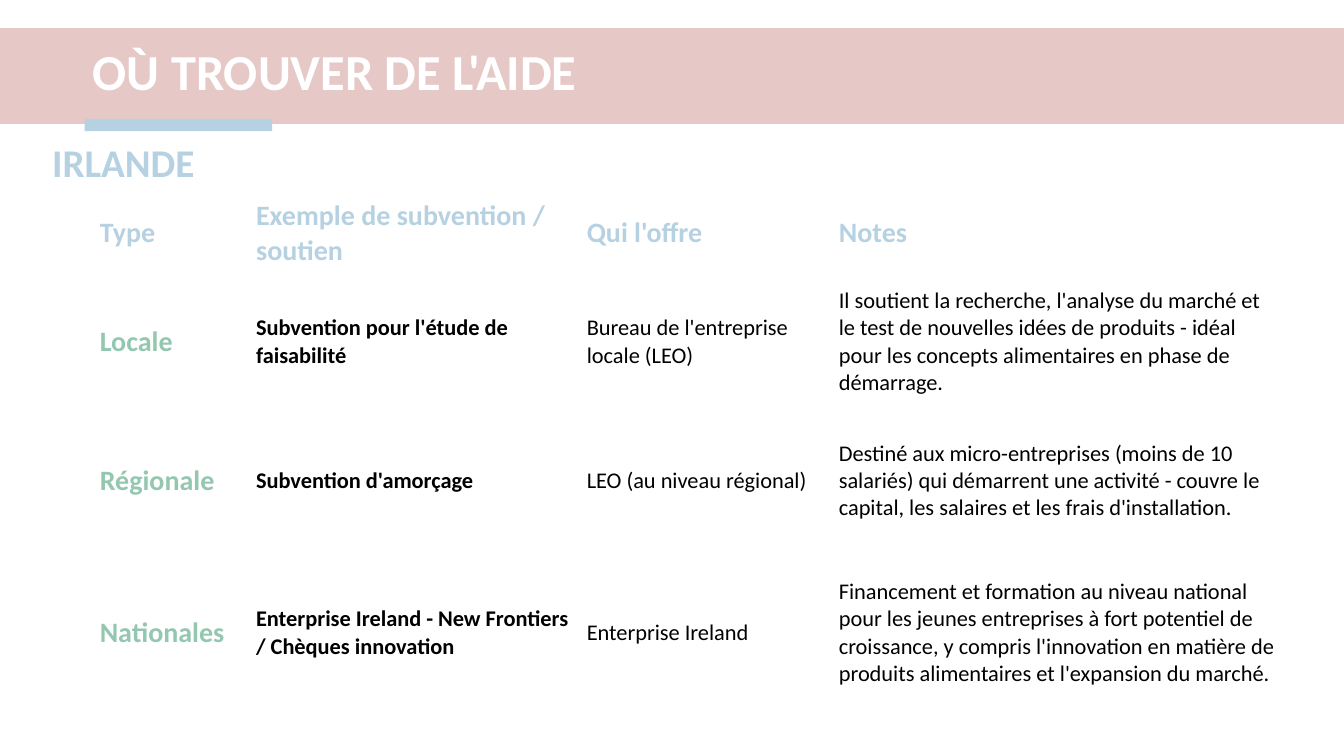
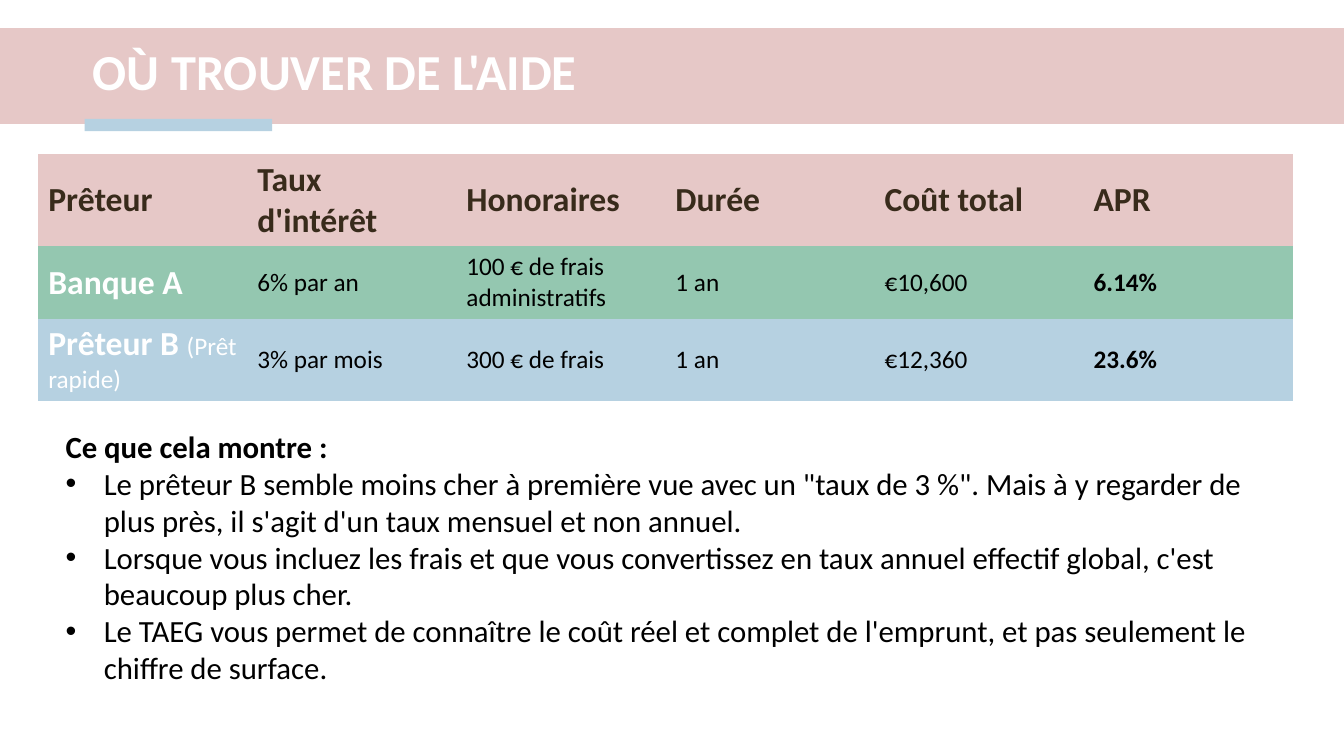
from dataclasses import dataclass
from typing import Optional

from lxml.etree import SubElement
from pptx import Presentation
from pptx.dml.color import RGBColor
from pptx.enum.shapes import MSO_SHAPE
from pptx.enum.text import MSO_ANCHOR, MSO_AUTO_SIZE, PP_ALIGN
from pptx.oxml.ns import qn
from pptx.util import Inches, Pt


@dataclass(frozen=True)
class Theme:
    font: str = "Calibri"
    pink: str = "E6C8C7"
    blue: str = "B6D1E1"
    green: str = "94C7B0"
    brown: str = "382B1B"
    black: str = "000000"
    white: str = "FFFFFF"
    title_size: int = 36
    country_size: int = 28
    lender_size: int = 24
    body_size: int = 22
    heading_size: int = 20
    figure_size: int = 18
    detail_size: int = 16


@dataclass(frozen=True)
class Style:
    size: int
    color: str
    bold: bool = False


@dataclass(frozen=True)
class Box:
    left: float
    top: float
    width: float
    height: float

    def lengths(self):
        return [Inches(value) for value in (self.left, self.top, self.width, self.height)]


@dataclass(frozen=True)
class TableRow:
    height: float
    texts: list[str]
    styles: list[Style]
    fill: Optional[str] = None
    note: str = ""


THEME = Theme()
TITLE = "OÙ TROUVER DE L'AIDE"
NO_STYLE_NO_GRID = "{2D5ABB26-0587-4C30-8999-92F81FD0307C}"
BULLET_INDENT = Inches(0.38)

TITLE_STYLE = Style(THEME.title_size, THEME.white, True)
COUNTRY_STYLE = Style(THEME.country_size, THEME.blue, True)
NOTE_STYLE = Style(THEME.figure_size, THEME.white)

SUPPORT_HEADER = [Style(THEME.heading_size, THEME.blue, True)] * 4
SUPPORT_STYLES = [
    Style(THEME.heading_size, THEME.green, True),
    Style(THEME.detail_size, THEME.black, True),
    Style(THEME.detail_size, THEME.black),
    Style(THEME.detail_size, THEME.black),
]
LOAN_HEADER = [Style(THEME.lender_size, THEME.brown, True)] * 6
LOAN_STYLES = [
    Style(THEME.lender_size, THEME.white, True),
    *[Style(THEME.figure_size, THEME.black)] * 4,
    Style(THEME.figure_size, THEME.black, True),
]

SUPPORT_ROWS = [
    TableRow(0.77, ["Type", "Exemple de subvention / soutien", "Qui l'offre", "Notes"],
             SUPPORT_HEADER),
    TableRow(1.38, [
        "Locale",
        "Subvention pour l'étude de faisabilité",
        "Bureau de l'entreprise locale (LEO)",
        "Il soutient la recherche, l'analyse du marché et le test de nouvelles idées "
        "de produits - idéal pour les concepts alimentaires en phase de démarrage.",
    ], SUPPORT_STYLES),
    TableRow(1.38, [
        "Régionale",
        "Subvention d'amorçage",
        "LEO (au niveau régional)",
        "Destiné aux micro-entreprises (moins de 10 salariés) qui démarrent une "
        "activité - couvre le capital, les salaires et les frais d'installation.",
    ], SUPPORT_STYLES),
    TableRow(1.64, [
        "Nationales",
        "Enterprise Ireland - New Frontiers / Chèques innovation",
        "Enterprise Ireland",
        "Financement et formation au niveau national pour les jeunes entreprises à "
        "fort potentiel de croissance, y compris l'innovation en matière de produits "
        "alimentaires et l'expansion du marché.",
    ], SUPPORT_STYLES),
]

LOAN_ROWS = [
    TableRow(0.91, ["Prêteur", "Taux d'intérêt", "Honoraires", "Durée", "Coût total", "APR"],
             LOAN_HEADER, THEME.pink),
    TableRow(0.72, ["Banque A", "6% par an", "100 € de frais administratifs", "1 an",
                    "€10,600", "6.14%"], LOAN_STYLES, THEME.green),
    TableRow(0.81, ["Prêteur B ", "3% par mois", "300 € de frais", "1 an",
                    "€12,360", "23.6%"], LOAN_STYLES, THEME.blue, "(Prêt rapide)"),
]

FINDINGS_HEADING = "Ce que cela montre :"
FINDINGS = [
    "Le prêteur B semble moins cher à première vue avec un \"taux de 3 %\". Mais à y "
    "regarder de plus près, il s'agit d'un taux mensuel et non annuel.",
    "Lorsque vous incluez les frais et que vous convertissez en taux annuel effectif "
    "global, c'est beaucoup plus cher.",
    "Le TAEG vous permet de connaître le coût réel et complet de l'emprunt, et pas "
    "seulement le chiffre de surface.",
]


def format_run(run, style: Style) -> None:
    run.font.name = THEME.font
    run.font.size = Pt(style.size)
    run.font.bold = style.bold
    run.font.color.rgb = RGBColor.from_string(style.color)


def write_paragraph(paragraph, text: str, style: Style) -> None:
    paragraph.text = text
    paragraph.alignment = PP_ALIGN.LEFT
    for run in paragraph.runs:
        format_run(run, style)


def place(shape, box: Box) -> None:
    shape.left, shape.top, shape.width, shape.height = box.lengths()


def add_master_bands(presentation, slide) -> None:
    """Draw the title bands and move them behind everything on the slide master."""
    bands = [
        (Box(0, 0.28, 13.33, 0.95), THEME.pink),
        (Box(0.84, 1.18, 1.86, 0.12), THEME.blue),
    ]
    master_tree = presentation.slide_master.shapes._spTree
    for position, (box, color) in enumerate(bands):
        band = slide.shapes.add_shape(MSO_SHAPE.RECTANGLE, *box.lengths())
        band.shadow.inherit = False
        band.fill.solid()
        band.fill.fore_color.rgb = RGBColor.from_string(color)
        band.line.fill.background()
        band._element.nvSpPr.cNvPr.set("id", str(100 + position))
        master_tree.insert(2 + position, band._element)


def add_titled_slide(presentation, layout_name: str):
    layout = presentation.slide_layouts.get_by_name(layout_name)
    slide = presentation.slides.add_slide(layout)
    title = slide.shapes.title
    place(title, Box(0.82, 0.34, 11.93, 0.79))
    frame = title.text_frame
    frame.auto_size = MSO_AUTO_SIZE.NONE
    frame.vertical_anchor = MSO_ANCHOR.MIDDLE
    write_paragraph(frame.paragraphs[0], TITLE, TITLE_STYLE)
    frame.paragraphs[0].line_spacing = 0.9
    return slide


def add_table(slide, left: float, top: float, column_widths: list[float],
              rows: list[TableRow], margins: tuple[float, float]) -> None:
    box = Box(left, top, sum(column_widths), sum(row.height for row in rows))
    frame = slide.shapes.add_table(len(rows), len(column_widths), *box.lengths())
    table = frame.table
    table.first_row = table.horz_banding = False
    table._tbl.tblPr.find(qn("a:tableStyleId")).text = NO_STYLE_NO_GRID
    for column, width in zip(table.columns, column_widths):
        column.width = Inches(width)
    for table_row, row in zip(table.rows, rows):
        table_row.height = Inches(row.height)
        for cell, text, style in zip(table_row.cells, row.texts, row.styles):
            cell.margin_left = cell.margin_right = Inches(margins[0])
            cell.margin_top = cell.margin_bottom = Inches(margins[1])
            cell.vertical_anchor = MSO_ANCHOR.MIDDLE
            if row.fill:
                cell.fill.solid()
                cell.fill.fore_color.rgb = RGBColor.from_string(row.fill)
            else:
                cell.fill.background()
            write_paragraph(cell.text_frame.paragraphs[0], text, style)
        if row.note:
            note = table_row.cells[0].text_frame.paragraphs[0].add_run()
            note.text = row.note
            format_run(note, NOTE_STYLE)


def set_bullet(paragraph, bulleted: bool) -> None:
    properties = paragraph._p.get_or_add_pPr()
    indent = BULLET_INDENT if bulleted else 0
    properties.set("marL", str(indent))
    properties.set("indent", str(-indent))
    if bulleted:
        SubElement(properties, qn("a:buFont")).set("typeface", "Arial")
        SubElement(properties, qn("a:buChar")).set("char", "•")
    else:
        SubElement(properties, qn("a:buNone"))


def fill_findings(slide) -> None:
    body = slide.placeholders[1]
    place(body, Box(0.55, 4.19, 11.93, 2.6))
    frame = body.text_frame
    frame.auto_size = MSO_AUTO_SIZE.NONE
    frame.vertical_anchor = MSO_ANCHOR.TOP
    for index, text in enumerate([FINDINGS_HEADING, *FINDINGS]):
        paragraph = frame.add_paragraph() if index else frame.paragraphs[0]
        set_bullet(paragraph, index > 0)
        write_paragraph(paragraph, text, Style(THEME.body_size, THEME.black, index == 0))
        paragraph.space_before = Pt(0)


def add_country_heading(slide, text: str) -> None:
    heading = slide.shapes.add_textbox(*Box(0.42, 1.46, 12.57, 0.45).lengths())
    heading.text_frame.word_wrap = True
    paragraph = heading.text_frame.paragraphs[0]
    write_paragraph(paragraph, text, COUNTRY_STYLE)
    paragraph.line_spacing = Pt(23.4)


def main() -> None:
    presentation = Presentation()
    presentation.slide_width = Inches(13.33)
    presentation.slide_height = Inches(7.5)

    support_slide = add_titled_slide(presentation, "Title Only")
    add_master_bands(presentation, support_slide)
    add_country_heading(support_slide, "IRLANDE")
    add_table(support_slide, 0.9, 1.93, [1.55, 3.28, 2.5, 4.52], SUPPORT_ROWS, (0.09, 0.04))

    loan_slide = add_titled_slide(presentation, "Title and Content")
    add_table(loan_slide, 0.38, 1.53, [12.44 / 6] * 6, LOAN_ROWS, (0.1, 0.05))
    fill_findings(loan_slide)

    presentation.save("out.pptx")


if __name__ == "__main__":
    main()
